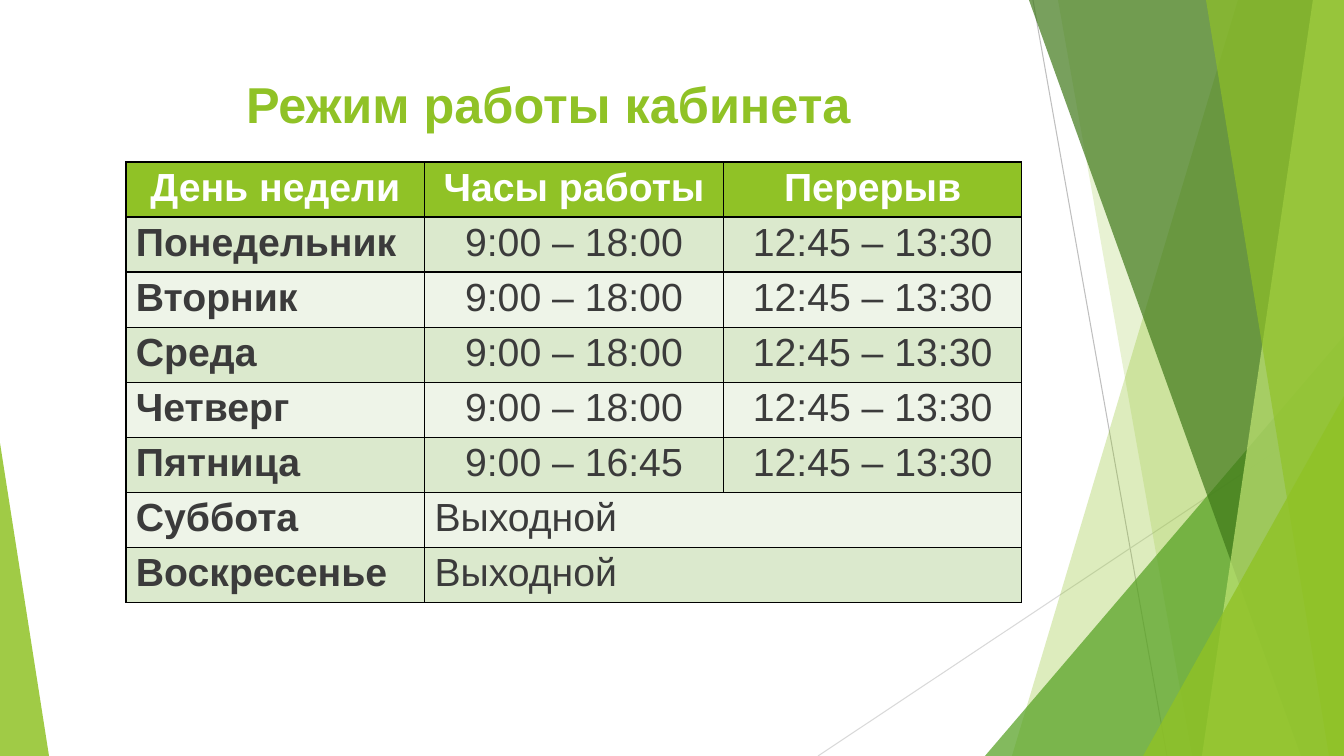
from lxml.etree import SubElement
from pptx import Presentation
from pptx.dml.color import RGBColor
from pptx.enum.shapes import MSO_CONNECTOR, MSO_SHAPE
from pptx.enum.text import MSO_ANCHOR, PP_ALIGN
from pptx.oxml import parse_xml
from pptx.oxml.ns import nsdecls, qn
from pptx.util import Pt

SCALE = 12192000 / 1344
LIME = RGBColor(0x90, 0xC2, 0x26)
GREEN = RGBColor(0x54, 0xA0, 0x21)
FOREST = RGBColor(0x3F, 0x78, 0x19)
PALE_LIME = RGBColor(0xC0, 0xE4, 0x74)
BAND_DARK = RGBColor(0xDB, 0xE9, 0xCD)
BAND_LIGHT = RGBColor(0xEE, 0xF4, 0xE8)
WHITE = RGBColor(0xFF, 0xFF, 0xFF)
TEXT = RGBColor(0x3B, 0x3B, 0x3B)
GRAY = RGBColor(0xBF, 0xBF, 0xBF)
LIGHT_GRAY = RGBColor(0xD9, 0xD9, 0xD9)

BREAK = "12:45 – 13:30"
FULL_DAY = "9:00 – 18:00"
SCHEDULE = [
    ("День недели", "Часы работы", "Перерыв"),
    ("Понедельник", FULL_DAY, BREAK),
    ("Вторник", FULL_DAY, BREAK),
    ("Среда", FULL_DAY, BREAK),
    ("Четверг", FULL_DAY, BREAK),
    ("Пятница", "9:00 – 16:45", BREAK),
    ("Суббота", "Выходной"),
    ("Воскресенье", "Выходной"),
]


def px(*values):
    return [round(v * SCALE) for v in values]


def apply(target, formats):
    for name, value in formats.items():
        setattr(target, name, value)


def write(tf, text, align, size, color, bold):
    p = tf.paragraphs[0]
    p.alignment = align
    r = p.add_run()
    r.text = text
    apply(r.font, {"name": "Arial", "size": Pt(size), "bold": bold})
    r.font.color.rgb = color


def paint(sp, color, opacity):
    sp.shadow.inherit = False
    sp.fill.solid()
    sp.fill.fore_color.rgb = color
    sp.line.fill.background()
    clr = sp.fill._xPr.find(qn("a:solidFill"))[0]
    SubElement(clr, qn("a:alpha")).set("val", str(opacity * 1000))


def add_line(s, start, end, color):
    cn = s.shapes.add_connector(MSO_CONNECTOR.STRAIGHT, *px(*start, *end))
    cn.line.width = Pt(0.75)
    cn.line.color.rgb = color
    SubElement(cn._element.spPr, qn("a:effectLst"))


def add_triangle(s, box, apex, color, opacity):
    sp = s.shapes.add_shape(MSO_SHAPE.ISOSCELES_TRIANGLE, *px(*box))
    sp.adjustments[0] = apex
    paint(sp, color, opacity)


def add_band(s, box, top_x, bottom_x, color, opacity):
    x, y, w, h = box
    fb = s.shapes.build_freeform(x + top_x, y, scale=SCALE)
    fb.add_line_segments([(x + w, y), (x + w, y + h), (x + bottom_x, y + h)], close=True)
    paint(fb.convert_to_shape(), color, opacity)


def add_right_decor(s, box):
    x, y, w, h = box
    add_line(s, (x + 215, y), (x + 349, y + h), GRAY)
    add_line(s, (x + w, y + 406), (x, y + h), LIGHT_GRAY)
    add_band(s, box, 420, 194, LIME, 30)
    add_band(s, box, 240, 374, LIME, 20)
    add_triangle(s, (x + 167, y + 336, w - 167, h - 336), 1, GREEN, 72)
    add_band(s, box, 211, 483, FOREST, 70)
    add_band(s, box, 495, 384, PALE_LIME, 70)
    add_band(s, box, 388, 511, LIME, 65)
    add_triangle(s, (x + 325, y + 396, w - 325, h - 396), 1, LIME, 80)


def add_title(s, box):
    tf = s.shapes.add_textbox(*px(*box)).text_frame
    apply(tf, {"word_wrap": True, "vertical_anchor": MSO_ANCHOR.TOP})
    write(tf, "Режим работы кабинета", PP_ALIGN.CENTER, 36, LIME, True)


def add_borders(cell):
    tcPr = cell._tc.get_or_add_tcPr()
    for i, side in enumerate(("lnL", "lnR", "lnT", "lnB")):
        tcPr.insert(i, parse_xml(
            f'<a:{side} {nsdecls("a")} w="12700"><a:solidFill>'
            f'<a:srgbClr val="000000"/></a:solidFill></a:{side}>'))


def add_schedule(s, box):
    rows, cols = len(SCHEDULE), len(SCHEDULE[0])
    tbl = s.shapes.add_table(rows, cols, *px(*box)).table
    margin_x, margin_y = px(10, 4)
    for i, values in enumerate(SCHEDULE):
        if i == 0:
            fill = LIME
        else:
            fill = BAND_DARK if i % 2 else BAND_LIGHT
        for j in range(cols):
            cell = tbl.cell(i, j)
            apply(cell, {"margin_left": margin_x, "margin_right": margin_x,
                         "margin_top": margin_y, "margin_bottom": margin_y})
            cell.fill.solid()
            cell.fill.fore_color.rgb = fill
            add_borders(cell)
        if len(values) < cols:
            tbl.cell(i, 1).merge(tbl.cell(i, cols - 1))
        for j, value in enumerate(values):
            centred = i == 0 or (j > 0 and len(values) == cols)
            write(tbl.cell(i, j).text_frame, value,
                  PP_ALIGN.CENTER if centred else PP_ALIGN.LEFT,
                  28, TEXT if i else WHITE, i == 0 or j == 0)


def main():
    prs = Presentation()
    prs.slide_width, prs.slide_height = px(1344, 756)
    s = prs.slides.add_slide(prs.slide_layouts[6])
    add_right_decor(s, (818, 0, 526, 756))
    add_triangle(s, (0, 443, 49, 313), 0, LIME, 85)
    add_title(s, (75, 68, 947, 145))
    add_schedule(s, (126, 162, 896, 432))
    prs.save("out.pptx")


if __name__ == "__main__":
    main()
